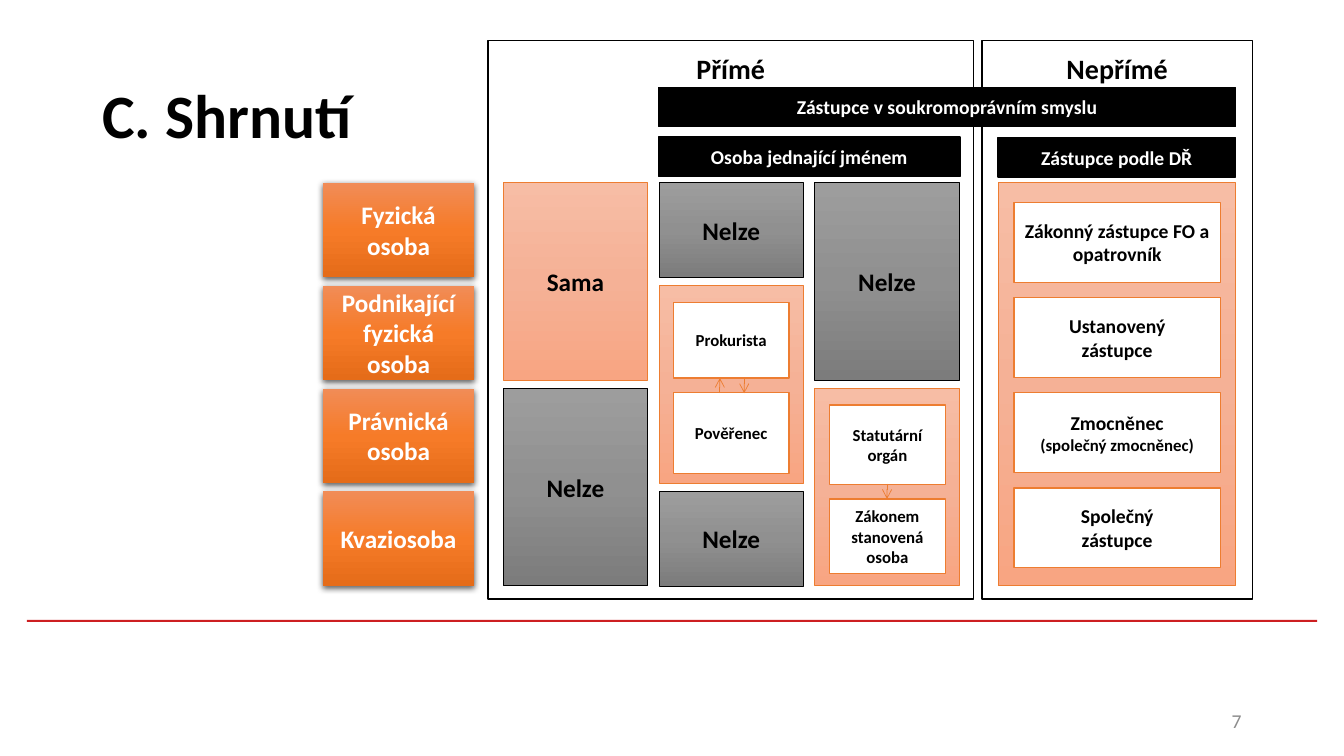
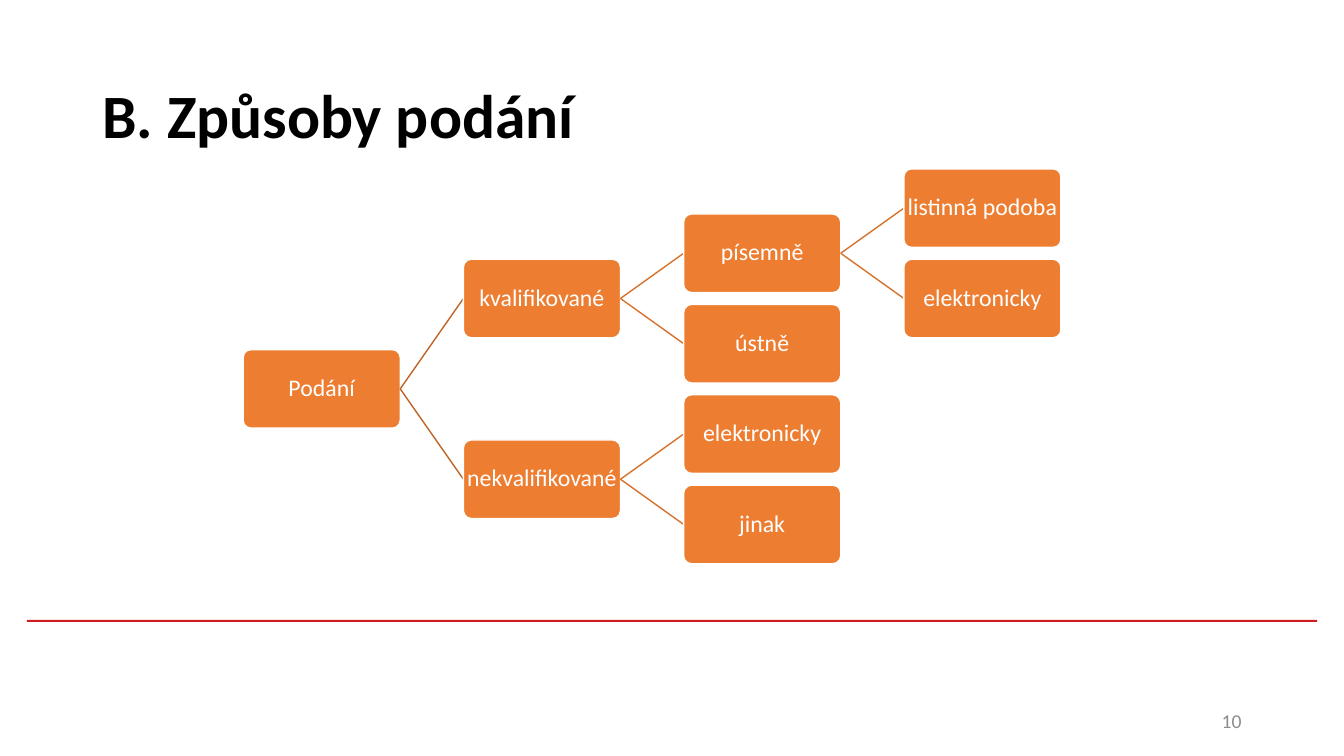
from lxml.etree import SubElement
from pptx import Presentation
from pptx.dml.color import RGBColor
from pptx.enum.shapes import MSO_CONNECTOR as Connector, MSO_SHAPE as Shape
from pptx.enum.text import MSO_ANCHOR as Anchor, PP_ALIGN as Align
from pptx.oxml.ns import qn
from pptx.util import Emu, Inches, Pt

# The slide is a grid of 160 columns by 90 rows of square units.
COLUMNS, ROWS, UNIT = 160, 90, 76200
FONT = "Calibri"
COLOURS = {
    "black": "000000", "white": "FFFFFF", "number": "8C8C8C", "rule": "CD1F21",
    "orange": "ED7D31", "branch": "BE6427", "twig": "D7712C",
}
GRADIENTS = {
    "label": ("F18C57", "F67B28", "E56C19"),
    "possible": ("F7BDA5", "F5B196", "F8A582"),
    "impossible": ("9D9D9D", "909090", "7C7C7C"),
}
# Kind of box: fill, line, line width, text colour, bold
BOXES = {
    "panel": ("white", "black", 1, "black", True),
    "bar": ("black", "black", 1, "white", True),
    "card": ("white", "orange", 1, "black", True),
    "label": ("label", None, 0, "white", True),
    "possible": ("possible", "orange", 0.5, "black", True),
    "impossible": ("impossible", "black", 0.5, "black", True),
    "node": ("orange", "white", 1, "white", False),
    "rule": ("rule", None, 0, "white", False),
}


def units(*values):
    return [Emu(round(value * UNIT)) for value in values]


def colour(name):
    return RGBColor.from_string(COLOURS[name])


class Deck:
    """Holds the style and the slide being drawn."""

    def __init__(self):
        self.presentation = Presentation()
        self.presentation.slide_width, self.presentation.slide_height = units(COLUMNS, ROWS)
        self.slide = None

    def new_slide(self, title, number):
        self.slide = self.presentation.slides.add_slide(self.presentation.slide_layouts[6])
        self.box("rule", (3.2, 73.8, 153.6, 0.24))
        self.text(title, (11, 4.8, 138, 17.4), 44, "black", True, Align.LEFT)
        self.text(str(number), (113, 83.4, 36, 4.8), 14, "number", False, Align.RIGHT)

    def fill_text(self, shape, text, size, ink, bold, align, last_size=None):
        frame = shape.text_frame
        frame.word_wrap = True
        frame.vertical_anchor = Anchor.MIDDLE
        frame.text = text
        for paragraph in frame.paragraphs:
            paragraph.alignment = align
            font = paragraph.font
            font.name, font.size, font.bold = FONT, Pt(size), bold
            font.color.rgb = colour(ink)
        if last_size:
            frame.paragraphs[-1].font.size = Pt(last_size)
        return frame

    def text(self, text, place, size, ink, bold, align):
        shape = self.slide.shapes.add_textbox(*units(*place))
        self.fill_text(shape, text, size, ink, bold, align)

    def paint(self, shape, fill):
        if fill not in GRADIENTS:
            shape.fill.solid()
            shape.fill.fore_color.rgb = colour(fill)
            return
        shape.fill.gradient()
        shape.fill.gradient_angle = 270
        stops = shape.element.spPr.find(qn("a:gradFill")).find(qn("a:gsLst"))
        stops.clear()
        for index, value in enumerate(GRADIENTS[fill]):
            stop = SubElement(stops, qn("a:gs"), pos=str(index * 50000))
            SubElement(stop, qn("a:srgbClr"), val=value)

    def box(self, kind, place, text="", size=18, form=Shape.RECTANGLE, last_size=None, inset=0.08):
        fill, line, width, ink, bold = BOXES[kind]
        shape = self.slide.shapes.add_shape(form, *units(*place))
        self.paint(shape, fill)
        if line:
            shape.line.color.rgb = colour(line)
            shape.line.width = Pt(width)
        else:
            shape.line.fill.background()
        shape.shadow.inherit = False
        if text:
            frame = self.fill_text(shape, text, size, ink, bold, Align.CENTER, last_size)
            frame.margin_left = frame.margin_right = Inches(inset)
        return shape

    def panel(self, place, heading):
        frame = self.box("panel", place, heading, 20).text_frame
        frame.vertical_anchor = Anchor.TOP
        frame.margin_top = Inches(0.11)

    def label(self, place, text):
        effects = self.box("label", place, text).element.spPr.find(qn("a:effectLst"))
        shadow = SubElement(effects, qn("a:outerShdw"), blurRad=str(Pt(4.5)),
                            dist=str(Pt(1.5)), dir="5400000", rotWithShape="0")
        shade = SubElement(shadow, qn("a:srgbClr"), val=COLOURS["black"])
        SubElement(shade, qn("a:alpha"), val="63000")

    def node(self, place, text):
        shape = self.box("node", place, text, 17, Shape.ROUNDED_RECTANGLE, inset=0.01)
        shape.adjustments[0] = 0.1
        shape.text_frame.paragraphs[0].line_spacing = 0.9

    def line(self, start, end, ink, width=1, arrow=False):
        connector = self.slide.shapes.add_connector(Connector.STRAIGHT, *units(*start, *end))
        connector.line.color.rgb = colour(ink)
        connector.line.width = Pt(width)
        properties = connector.element.spPr
        if arrow:
            SubElement(properties.find(qn("a:ln")), qn("a:tailEnd"), type="arrow")
        SubElement(properties, qn("a:effectLst"))


# Matrix of the summary slide
CELL_WIDTH, CELL_HEIGHT = 17.2, 11.25
COLUMN_PITCH, ROW_PITCH = 18.55, 12.25
MATRIX_LEFT, MATRIX_TOP = 59.9, 21.75


def band(row, count=1):
    """Top and height of a run of matrix rows."""
    return MATRIX_TOP + row * ROW_PITCH, (count - 1) * ROW_PITCH + CELL_HEIGHT


def summary_slide(deck):
    deck.new_slide("C. Shrnutí", 7)

    # Panels and heading bars
    deck.panel((116.9, 4.8, 32.2, 66.5), "Nepřímé")
    deck.panel((58.1, 4.8, 57.8, 66.5), "Přímé")
    for left, top, width, text in (
        (78.4, 10.4, 68.7, "Zástupce v soukromoprávním smyslu"),
        (118.8, 16.4, 28.3, "Zástupce podle DŘ"),
        (78.4, 16.3, 35.9, "Osoba jednající jménem"),
    ):
        deck.box("bar", (left, top, width, 4.7), text, 14)

    # Row labels
    labels = ("Fyzická osoba", "Podnikající fyzická osoba", "Právnická osoba", "Kvaziosoba")
    for row, text in enumerate(labels):
        top, height = band(row)
        deck.label((38.45, top, 18, height), text)

    # Matrix cells: kind, column, first row, row count, text
    for kind, column, row, count, text in (
        ("possible", 0, 0, 2, "Sama"),
        ("impossible", 0, 2, 2, "Nelze"),
        ("impossible", 1, 0, 1, "Nelze"),
        ("possible", 1, 1, 2, ""),
        ("impossible", 1, 3, 1, "Nelze"),
        ("impossible", 2, 0, 2, "Nelze"),
        ("possible", 2, 2, 2, ""),
    ):
        top, height = band(row, count)
        left = MATRIX_LEFT + column * COLUMN_PITCH
        deck.box(kind, (left, top, CELL_WIDTH, height), text)

    # Persons acting in the name of the entity
    for left, top, height, text in (
        (80.15, 36, 9, "Prokurista"),
        (80.15, 46.7, 9.7, "Pověřenec"),
        (98.75, 48.2, 9.5, "Statutární orgán"),
        (98.75, 59.4, 8.9, "Zákonem stanovená osoba"),
    ):
        deck.box("card", (left, top, 13.8, height), text, 12)
    for x, start, end in ((85.7, 46.8, 45), (88.6, 45, 46.8), (105.6, 57.6, 59.4)):
        deck.line((x, start), (x, end), "orange", 0.5, arrow=True)

    # Indirect representatives
    top, height = band(0, 4)
    deck.box("possible", (118.8, top, 28.3, height))
    for index, (text, last_size) in enumerate((
        ("Zákonný zástupce FO a opatrovník", None),
        ("Ustanovený\nzástupce", None),
        ("Zmocněnec\n(společný zmocněnec)", 12),
        ("Společný\nzástupce", None),
    )):
        place = (120.7, 24.1 + index * 11.33, 24.6, 9.5)
        deck.box("card", place, text, 14, last_size=last_size)


# Tree of the filing slide: text, half-row slot, children
TREE = ("Podání", 4, (
    ("kvalifikované", 2, (
        ("písemně", 1, (("listinná podoba", 0, ()), ("elektronicky", 2, ()))),
        ("ústně", 3, ()),
    )),
    ("nekvalifikované", 6, (("elektronicky", 5, ()), ("jinak", 7, ()))),
))
NODE_WIDTH, NODE_HEIGHT = 18.7, 9.35
LEVEL_PITCH, SLOT_PITCH = 26.22, 5.38
TREE_LEFT, TREE_TOP = 28.95, 20.1


def draw_tree(deck, tree, level=0):
    text, slot, children = tree
    left = TREE_LEFT + level * LEVEL_PITCH
    top = TREE_TOP + slot * SLOT_PITCH
    middle = top + NODE_HEIGHT / 2
    deck.node((left, top, NODE_WIDTH, NODE_HEIGHT), text)
    for child in children:
        end = (left + LEVEL_PITCH, middle + (child[1] - slot) * SLOT_PITCH)
        deck.line((left + NODE_WIDTH, middle), end, "twig" if level else "branch")
        draw_tree(deck, child, level + 1)


def filing_slide(deck):
    deck.new_slide("B. Způsoby podání", 10)
    draw_tree(deck, TREE)


def main():
    deck = Deck()
    summary_slide(deck)
    filing_slide(deck)
    deck.presentation.save("out.pptx")


if __name__ == "__main__":
    main()
